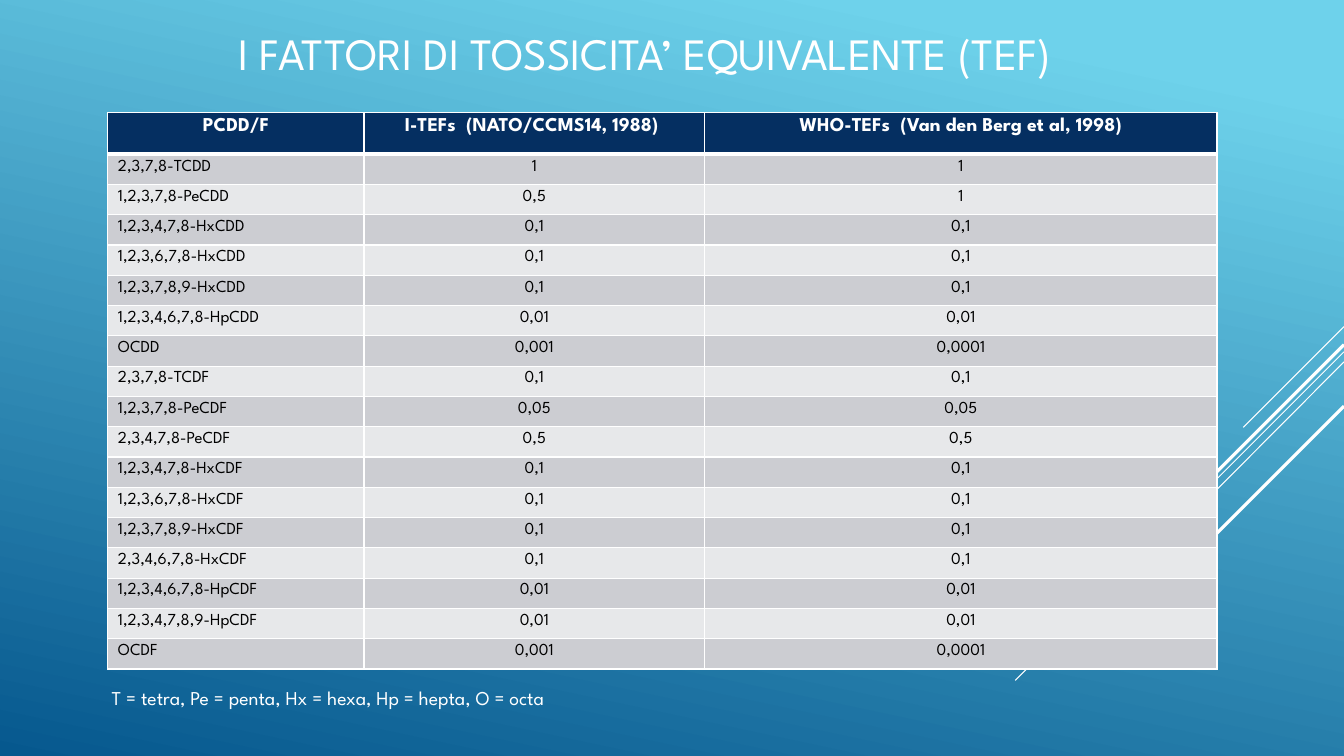
import lxml.etree
import pptx
import pptx.dml.color
import pptx.enum.text
import pptx.oxml.ns
import pptx.util

PX = 9144
FONT = "League Spartan"
COLOURS = {
    "white": "FFFFFF",
    "black": "000000",
    "sky": "6ED2EB",
    "deep": "06588E",
    "header": "052F61",
    "odd": "CCCDD2",
    "even": "E7E8EA",
}
LEFT = pptx.enum.text.PP_ALIGN.LEFT
CENTER = pptx.enum.text.PP_ALIGN.CENTER
STREAKS = [
    (1333, 324, 1233, 424, 0.75),
    (1333, 349, 1007, 675, 0.75),
    (1333, 359, 1126, 567, 0.75),
    (1333, 342, 1142, 533, 2.25),
    (1333, 403, 1194, 542, 2.25),
]
COLUMN_WIDTHS = [254, 338, 508]
HEADER_HEIGHT = 41
ROW_HEIGHT = 30
FACTORS = [
    ("PCDD/F", "I-TEFs  (NATO/CCMS14, 1988) ", "WHO-TEFs  (Van den Berg et al, 1998)"),
    ("2,3,7,8-TCDD", "1", "1"),
    ("1,2,3,7,8-PeCDD", "0,5", "1"),
    ("1,2,3,4,7,8-HxCDD", "0,1", "0,1"),
    ("1,2,3,6,7,8-HxCDD", "0,1", "0,1"),
    ("1,2,3,7,8,9-HxCDD", "0,1", "0,1"),
    ("1,2,3,4,6,7,8-HpCDD", "0,01", "0,01"),
    ("OCDD", "0,001", "0,0001"),
    ("2,3,7,8-TCDF", "0,1", "0,1"),
    ("1,2,3,7,8-PeCDF", "0,05", "0,05"),
    ("2,3,4,7,8-PeCDF", "0,5", "0,5"),
    ("1,2,3,4,7,8-HxCDF", "0,1", "0,1"),
    ("1,2,3,6,7,8-HxCDF", "0,1", "0,1"),
    ("1,2,3,7,8,9-HxCDF", "0,1", "0,1"),
    ("2,3,4,6,7,8-HxCDF", "0,1", "0,1"),
    ("1,2,3,4,6,7,8-HpCDF", "0,01", "0,01"),
    ("1,2,3,4,7,8,9-HpCDF", "0,01", "0,01"),
    ("OCDF", "0,001", "0,0001"),
]


def emu(*lengths):
    """Turn pixel lengths into EMU."""
    return [pptx.util.Emu(length * PX) for length in lengths]


def colour(name):
    """Look up a named colour."""
    return pptx.dml.color.RGBColor.from_string(COLOURS[name])


def paint_background(page):
    """Fill the page with the slanted blue gradient."""
    fill = page.background.fill
    fill.gradient()
    fill.gradient_angle = 258
    for stop, name, position in zip(fill.gradient_stops, ("sky", "deep"), (0.1, 1)):
        stop.color.rgb = colour(name)
        stop.position = position


def add_streak(page, x1, y1, x2, y2, weight):
    """Draw one white diagonal line."""
    line = page.shapes.add_connector(
        pptx.enum.shapes.MSO_CONNECTOR.STRAIGHT, *emu(x1, y1, x2, y2)
    )
    line.line.color.rgb = colour("white")
    line.line.width = pptx.util.Pt(weight)
    properties = line._element.spPr
    lxml.etree.SubElement(properties, pptx.oxml.ns.qn("a:effectLst"))


def write(frame, text, size, ink, align, bold=False):
    """Put one styled paragraph into a text frame."""
    para = frame.paragraphs[0]
    para.text = text
    para.alignment = align
    para.font.name = FONT
    para.font.size = pptx.util.Pt(size)
    para.font.bold = bold
    para.font.color.rgb = colour(ink)


def add_label(page, left, top, width, height, text, size, align):
    """Add a white line of text straight on the background."""
    box = page.shapes.add_textbox(*emu(left, top, width, height))
    box.text_frame.word_wrap = True
    write(box.text_frame, text, size, "white", align)


def add_borders(cell, weights):
    """Give a cell white borders of the given weight per side."""
    properties = cell._tc.get_or_add_tcPr()
    for side, weight in weights.items():
        border = lxml.etree.SubElement(
            properties, pptx.oxml.ns.qn(f"a:ln{side}"), w=str(pptx.util.Pt(weight))
        )
        solid = lxml.etree.SubElement(border, pptx.oxml.ns.qn("a:solidFill"))
        lxml.etree.SubElement(
            solid, pptx.oxml.ns.qn("a:srgbClr"), val=COLOURS["white"]
        )


def style_cell(cell, text, row, column):
    """Write, border and fill one cell by its place in the table."""
    header = row == 0
    add_borders(cell, {"L": 1, "R": 1, "T": 3 if row == 1 else 1, "B": 3 if header else 1})
    cell.fill.solid()
    cell.fill.fore_color.rgb = colour("header" if header else "odd" if row % 2 else "even")
    align = LEFT if column == 0 and not header else CENTER
    if header:
        write(cell.text_frame, text, 14, "white", align, True)
    else:
        write(cell.text_frame, text, 12, "black", align)


def add_factor_table(page, left, top):
    """Build the table of equivalence factors."""
    heights = [HEADER_HEIGHT] + [ROW_HEIGHT] * (len(FACTORS) - 1)
    table = page.shapes.add_table(
        len(FACTORS),
        len(COLUMN_WIDTHS),
        *emu(left, top, sum(COLUMN_WIDTHS), sum(heights)),
    ).table
    for column, width in zip(table.columns, emu(*COLUMN_WIDTHS)):
        column.width = width
    for row, height in zip(table.rows, emu(*heights)):
        row.height = height
    for row, values in enumerate(FACTORS):
        for column, text in enumerate(values):
            style_cell(table.cell(row, column), text, row, column)


def main():
    """Build the slide and save it."""
    deck = pptx.Presentation()
    deck.slide_width, deck.slide_height = emu(1333, 750)
    page = deck.slides.add_slide(deck.slide_layouts[6])
    paint_background(page)
    for streak in STREAKS:
        add_streak(page, *streak)
    legend = "T = tetra, Pe = penta, Hx = hexa, Hp = hepta, O = octa"
    add_label(page, 101, 676, 913, 34, legend, 14, LEFT)
    add_factor_table(page, 107, 112)
    title = "I FATTORI DI TOSSICITA’ EQUIVALENTE (TEF)"
    add_label(page, 164, 21, 952, 64, title, 32, CENTER)
    deck.save("out.pptx")


if __name__ == "__main__":
    main()
